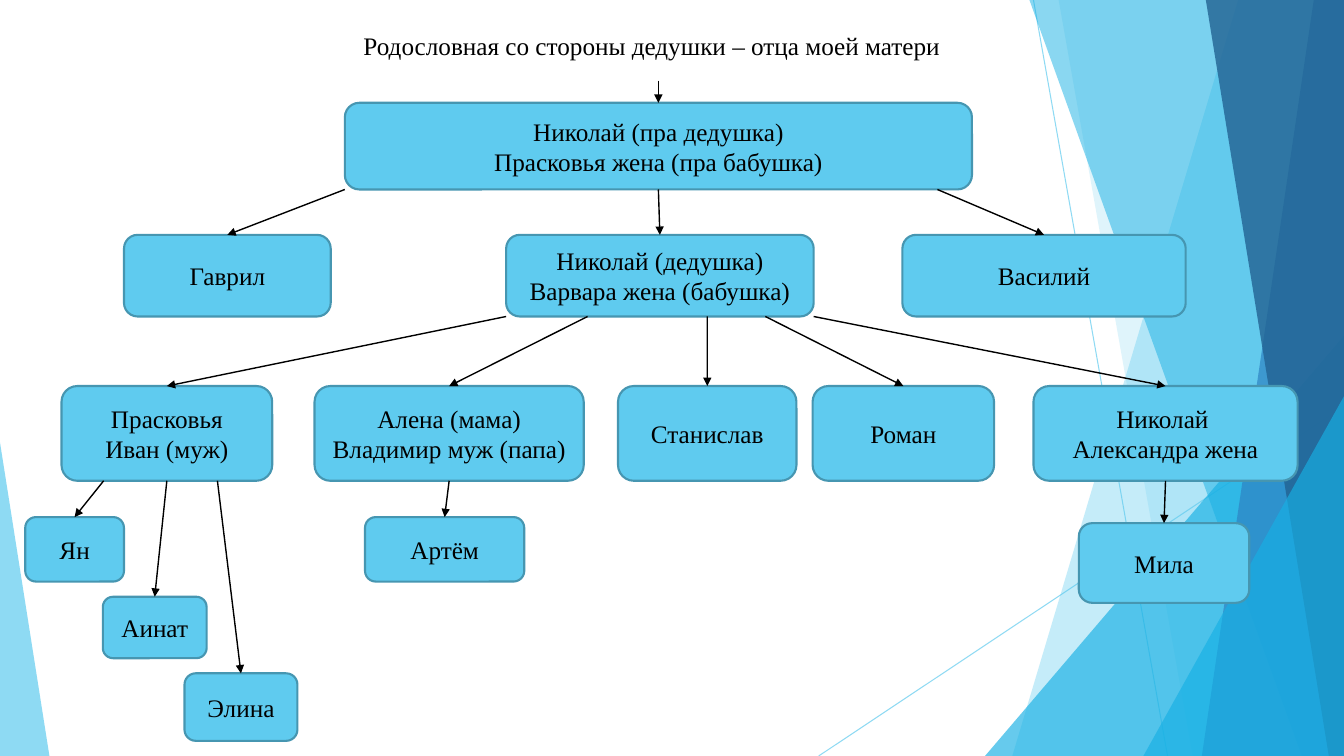
from lxml import etree
from pptx import Presentation
from pptx.dml.color import RGBColor
from pptx.enum.shapes import MSO_CONNECTOR, MSO_SHAPE
from pptx.enum.text import MSO_ANCHOR, PP_ALIGN
from pptx.oxml.ns import qn
from pptx.util import Inches, Pt

STRAIGHT = MSO_CONNECTOR.STRAIGHT
ROUNDED, TRIANGLE = MSO_SHAPE.ROUNDED_RECTANGLE, MSO_SHAPE.ISOSCELES_TRIANGLE
MIDDLE, CENTER = MSO_ANCHOR.MIDDLE, PP_ALIGN.CENTER
WIDTH, HEIGHT = Inches(13.33), Inches(7.5)
COLS, ROWS = 1333, 750
FONT, BLACK, SKY, CYAN = "Times New Roman", "000000", "5FCBEF", "17B0E4"

STRIP, PEAK = "strip", "peak"
LAYERS = [
    (STRIP, 251, 27, SKY, 36),
    (STRIP, 73, 206, SKY, 20),
    (PEAK, 0, 333, CYAN, 66),
    (STRIP, 44, 314, CYAN, 50),
    (STRIP, 326, 215, "2E83C3", 70),
    (STRIP, 219, 341, "226292", 80),
    (PEAK, 157, 393, CYAN, 66),
]

GENERATIONS = [
    (22, 86, [("прадед", 317, 622, ["Николай (пра дедушка)", "Прасковья жена (пра бабушка)"])]),
    (153, 81, [
        ("Гаврил", 98, 205, ["Гаврил"]),
        ("дед", 477, 305, ["Николай (дедушка)", "Варвара жена (бабушка)"]),
        ("Василий", 870, 281, ["Василий"]),
    ]),
    (303, 94, [
        ("Прасковья", 36, 209, ["Прасковья", "Иван (муж)"]),
        ("Алена", 287, 267, ["Алена (мама)", "Владимир муж (папа)"]),
        ("Станислав", 588, 177, ["Станислав"]),
        ("Роман", 781, 180, ["Роман"]),
        ("Николай", 1000, 262, ["Николай ", "Александра жена"]),
    ]),
    (433, 64, [("Ян", 0, 98, ["Ян"]), ("Артём", 337, 158, ["Артём"])]),
    (512, 61, [("Аинат", 77, 103, ["Аинат"])]),
    (588, 67, [("Элина", 158, 112, ["Элина"])]),
    (439, 79, [("Мила", 1045, 169, ["Мила"])]),
]

CHILDREN = {
    "прадед": [("Гаврил", 0), ("дед", 0.5), ("Василий", 0.945)],
    "дед": [("Прасковья", 0), ("Алена", 0.265), ("Станислав", 0.654),
            ("Роман", 0.843), ("Николай", 1)],
    "Прасковья": [("Ян", 0.2), ("Аинат", 0.5), ("Элина", 0.74)],
    "Алена": [("Артём", 0.5)],
    "Николай": [("Мила", 0.5)],
}


def rgb(code):
    return RGBColor.from_string(code)


def col(n):
    return round(WIDTH * n / COLS)


def row(n):
    return round(HEIGHT * n / ROWS)


def set_alpha(color_format_owner, percent):
    color = next(color_format_owner.iter(qn("a:srgbClr")))
    etree.SubElement(color, qn("a:alpha")).set("val", str(percent * 1000))


def paint(sp, color, alpha):
    sp.shadow.inherit = False
    sp.fill.solid()
    sp.fill.fore_color.rgb = rgb(color)
    sp.line.fill.background()
    set_alpha(sp._element.spPr, alpha)


def add_line(s, x1, y1, x2, y2, color, width):
    line = s.shapes.add_connector(STRAIGHT, x1, y1, x2, y2)
    line.line.color.rgb = rgb(color)
    line.line.width = Pt(width)
    etree.SubElement(line._element.spPr, qn("a:effectLst"))
    return line


def add_arrow(s, x1, y1, x2, y2):
    arrow = add_line(s, x1, y1, x2, y2, BLACK, 1)
    etree.SubElement(arrow.line._get_or_add_ln(), qn("a:tailEnd")).set("type", "triangle")
    return arrow


def write(tf, lines):
    tf.word_wrap = True
    for i, text in enumerate(lines):
        p = tf.paragraphs[0] if i == 0 else tf.add_paragraph()
        p.text = text
        p.alignment = CENTER
        p.font.name, p.font.size = FONT, Pt(18)
        p.font.color.rgb = rgb(BLACK)


def add_peak(s, left, top, width, height, apex, color, alpha):
    sp = s.shapes.add_shape(TRIANGLE, col(left), row(top), col(width), row(height))
    sp.adjustments[0] = apex
    paint(sp, color, alpha)


def facets(s, x, y, w, h):
    for x1, y1, x2 in [(48, 0, 181), (356, 403, -165)]:
        line = add_line(s, col(x + x1), row(y + y1), col(x + x2), row(y + h), SKY, 0.75)
        set_alpha(line._element.spPr, 70)
    for kind, a, b, color, alpha in LAYERS:
        if kind == PEAK:
            add_peak(s, x + a, y + b, w - a, h - b, 1, color, alpha)
            continue
        outline = s.shapes.build_freeform(col(x + a), row(y))
        outline.add_line_segments([
            (col(x + w), row(y)), (col(x + w), row(y + h)), (col(x + b), row(y + h)),
        ])
        paint(outline.convert_to_shape(), color, alpha)


def person(s, x, y, w, h, lines):
    sp = s.shapes.add_shape(ROUNDED, col(x), row(y), col(w), row(h))
    sp.shadow.inherit = False
    sp.fill.solid()
    sp.fill.fore_color.rgb = rgb(SKY)
    sp.line.color.rgb = rgb("4696B1")
    sp.line.width = Pt(1.5)
    sp.text_frame.vertical_anchor = MIDDLE
    write(sp.text_frame, lines)
    return sp


def family_tree(s, x, y):
    people = {}
    for top, height, members in GENERATIONS:
        for key, left, width, lines in members:
            people[key] = person(s, x + left, y + top, width, height, lines)

    root = people["прадед"]
    middle = root.left + root.width // 2
    add_arrow(s, middle, row(y), middle, root.top).end_connect(root, 0)
    for key, links in CHILDREN.items():
        parent = people[key]
        bottom = parent.top + parent.height
        for child_key, share in links:
            child = people[child_key]
            start = parent.left + round(parent.width * share)
            arrow = add_arrow(s, start, bottom, child.left + child.width // 2, child.top)
            if share == 0.5:
                arrow.begin_connect(parent, 2)
            arrow.end_connect(child, 0)


def title(s, x, y, w, h):
    tb = s.shapes.add_textbox(col(x), row(y), col(w), row(h))
    write(tb.text_frame, ["Родословная со стороны дедушки – отца моей матери"])


def main():
    prs = Presentation()
    prs.slide_width, prs.slide_height = WIDTH, HEIGHT
    s = prs.slides.add_slide(prs.slide_layouts[6])
    facets(s, 977, 0, 356, ROWS)
    add_peak(s, 0, 439, 49, 311, 0, SKY, 70)
    family_tree(s, 25, 80)
    title(s, 239, 25, 815, 40)
    prs.save("out.pptx")


if __name__ == "__main__":
    main()
